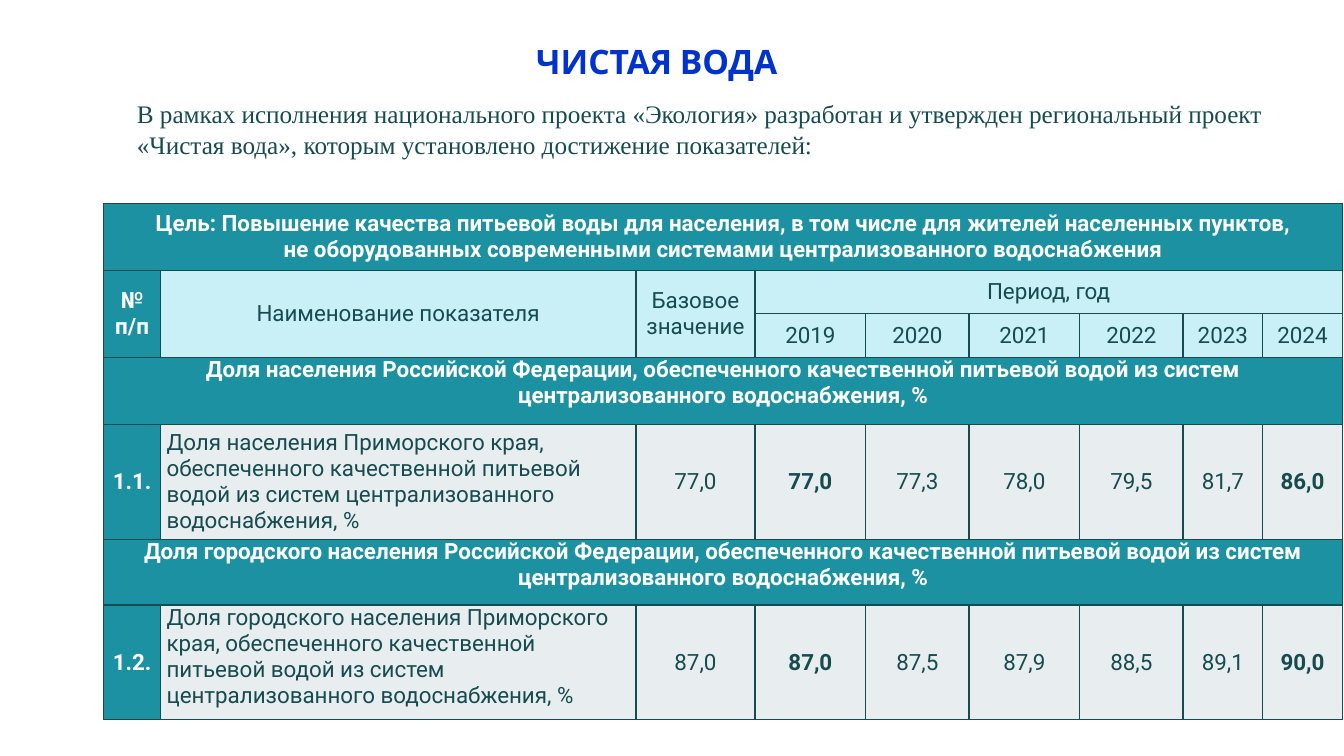
from dataclasses import dataclass

from lxml import etree
from pptx import Presentation
from pptx.dml.color import RGBColor
from pptx.enum.text import MSO_ANCHOR, MSO_AUTO_SIZE, PP_ALIGN
from pptx.oxml.ns import qn
from pptx.util import Pt

LEFT, CENTER, JUSTIFY = PP_ALIGN.LEFT, PP_ALIGN.CENTER, PP_ALIGN.JUSTIFY
TOP, MIDDLE = MSO_ANCHOR.TOP, MSO_ANCHOR.MIDDLE
GROW = MSO_AUTO_SIZE.SHAPE_TO_FIT_TEXT


@dataclass(frozen=True)
class Theme:
    title_blue: str = "0033CC"
    ink: str = "164B4F"
    white: str = "FFFFFF"
    teal: str = "1B91A1"
    aqua: str = "C8F0F6"
    mist: str = "E8EEF0"
    title_font: str = "Cabin"
    intro_font: str = "Times New Roman"
    table_font: str = "Roboto"
    title_size: int = 24
    intro_size: int = 18
    table_size: int = 16


THEME = Theme()

INTRO = [
    "В рамках исполнения национального проекта «Экология» разработан и утвержден региональный проект",
    "«Чистая вода», которым установлено достижение показателей:",
]
GOAL = [
    "Цель: Повышение качества питьевой воды для населения, в том числе для жителей населенных пунктов,\v"
    "не оборудованных современными системами централизованного водоснабжения"
]
YEARS = ["2019", "2020", "2021", "2022", "2023", "2024"]
SECTIONS = [
    (
        "Доля населения Российской Федерации, обеспеченного качественной питьевой водой из систем "
        "централизованного водоснабжения, %",
        "1.1.",
        ["Доля населения Приморского края, обеспеченного качественной питьевой",
         "водой из систем централизованного водоснабжения, %"],
        MIDDLE,
        ["77,0", "77,0", "77,3", "78,0", "79,5", "81,7", "86,0"],
    ),
    (
        "Доля городского населения Российской Федерации, обеспеченного качественной питьевой водой из систем "
        "централизованного водоснабжения, %",
        "1.2.",
        ["Доля городского населения Приморского",
         "края, обеспеченного качественной питьевой водой из систем централизованного водоснабжения, %"],
        TOP,
        ["87,0", "87,0", "87,5", "87,9", "88,5", "89,1", "90,0"],
    ),
]
COLUMN_WIDTHS = [40.3, 339.8, 85, 79.2, 73.7, 79.2, 73.7, 56.9, 56.9]
ROW_HEIGHTS = [47.8, 31, 31, 48, 82, 47, 82]
BOLD_VALUES = (1, 6)


def write_lines(frame, lines, font, size, color, bold=False, align=LEFT):
    for index, line in enumerate(lines):
        para = frame.paragraphs[0] if index == 0 else frame.add_paragraph()
        para.alignment = align
        for part_index, part in enumerate(line.split("\v")):
            if part_index:
                para.add_line_break()
            span = para.add_run()
            span.text = part
            span.font.name = font
            span.font.size = Pt(size)
            span.font.bold = bold
            span.font.color.rgb = RGBColor.from_string(color)


def add_text(page, left, top, width, height, lines, *style, **options):
    box = page.shapes.add_textbox(Pt(left), Pt(top), Pt(width), Pt(height))
    box.text_frame.word_wrap = True
    box.text_frame.auto_size = GROW
    write_lines(box.text_frame, lines, *style, **options)


def set_borders(cell):
    properties = cell._tc.get_or_add_tcPr()
    for side in ("a:lnL", "a:lnR", "a:lnT", "a:lnB"):
        line = etree.SubElement(properties, qn(side), w=str(Pt(1)))
        fill = etree.SubElement(line, qn("a:solidFill"))
        etree.SubElement(fill, qn("a:srgbClr"), val=THEME.ink)


def fill_cell(cell, lines, fill, bold=False, align=CENTER, anchor=MIDDLE, inset=4.5):
    cell.margin_left = cell.margin_right = Pt(inset)
    cell.margin_top = cell.margin_bottom = 0
    cell.vertical_anchor = anchor
    cell.fill.solid()
    cell.fill.fore_color.rgb = RGBColor.from_string(fill)
    color = THEME.white if fill == THEME.teal else THEME.ink
    write_lines(cell.text_frame, lines, THEME.table_font, THEME.table_size, color, bold, align)


def fill_span(table, top, left, bottom, right, lines, fill, **options):
    cell = table.cell(top, left)
    cell.merge(table.cell(bottom, right))
    fill_cell(cell, lines, fill, **options)


def fill_header(table):
    fill_span(table, 0, 0, 0, 8, GOAL, THEME.teal, bold=True)
    fill_span(table, 1, 0, 2, 0, ["№ п/п"], THEME.teal, bold=True)
    fill_span(table, 1, 1, 2, 1, ["Наименование показателя"], THEME.aqua)
    fill_span(table, 1, 2, 2, 2, ["Базовое значение"], THEME.aqua, inset=3)
    fill_span(table, 1, 3, 1, 8, ["Период, год"], THEME.aqua)
    for column, year in enumerate(YEARS, 3):
        fill_cell(table.cell(2, column), [year], THEME.aqua)


def fill_section(table, row, heading, number, name, name_anchor, values):
    fill_span(table, row, 0, row, 8, [heading], THEME.teal, bold=True, anchor=TOP)
    fill_cell(table.cell(row + 1, 0), [number], THEME.teal, bold=True)
    fill_cell(table.cell(row + 1, 1), name, THEME.mist, align=LEFT, anchor=name_anchor)
    for index, value in enumerate(values):
        fill_cell(table.cell(row + 1, index + 2), [value], THEME.mist, bold=index in BOLD_VALUES)


def add_indicator_table(page, left, top):
    frame = page.shapes.add_table(
        len(ROW_HEIGHTS), len(COLUMN_WIDTHS), Pt(left), Pt(top),
        Pt(sum(COLUMN_WIDTHS)), Pt(sum(ROW_HEIGHTS)),
    )
    table = frame.table
    for column, width in zip(table.columns, COLUMN_WIDTHS):
        column.width = Pt(width)
    for row, height in zip(table.rows, ROW_HEIGHTS):
        row.height = Pt(height)
    for cell in table.iter_cells():
        set_borders(cell)
    fill_header(table)
    for index, section in enumerate(SECTIONS):
        fill_section(table, 3 + 2 * index, *section)


def main():
    deck = Presentation()
    deck.slide_width, deck.slide_height = Pt(960), Pt(540)
    page = deck.slides.add_slide(deck.slide_layouts[6])
    add_text(page, 116.6, 26, 705, 36, ["ЧИСТАЯ ВОДА"],
             THEME.title_font, THEME.title_size, THEME.title_blue, bold=True, align=CENTER)
    add_text(page, 90.7, 67, 867.6, 51, INTRO,
             THEME.intro_font, THEME.intro_size, THEME.ink, align=JUSTIFY)
    add_indicator_table(page, 74.2, 145.4)
    deck.save("out.pptx")


if __name__ == "__main__":
    main()
